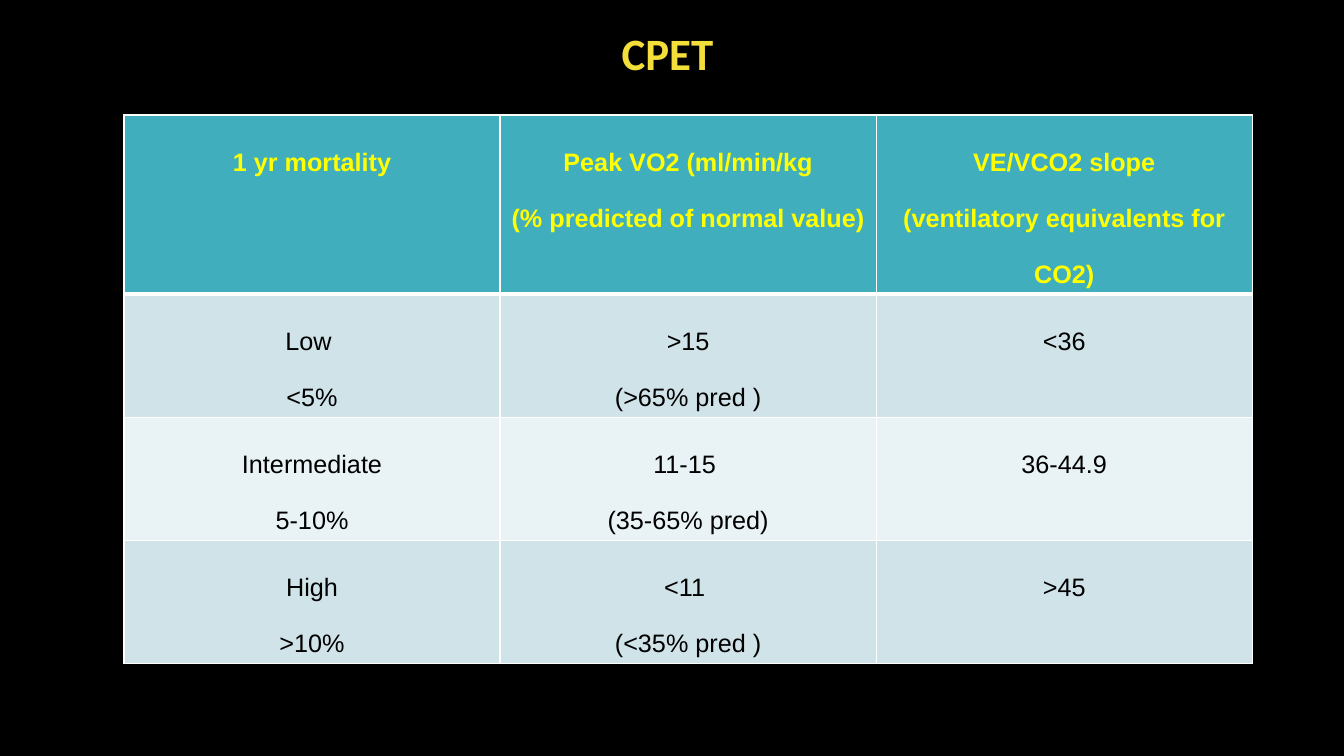
from lxml import etree
from pptx import Presentation
from pptx.dml.color import RGBColor
from pptx.enum.text import MSO_ANCHOR, PP_ALIGN
from pptx.oxml.ns import qn
from pptx.util import Inches, Pt

CENTER = PP_ALIGN.CENTER
MIDDLE = MSO_ANCHOR.MIDDLE
TOP = MSO_ANCHOR.TOP

BLACK = RGBColor(0x00, 0x00, 0x00)
WHITE = RGBColor(0xFF, 0xFF, 0xFF)
GOLD = RGBColor(0xF4, 0xDE, 0x3A)
YELLOW = RGBColor(0xFF, 0xFF, 0x00)
TEAL = RGBColor(0x41, 0xAE, 0xBD)
BAND_DARK = RGBColor(0xCF, 0xE3, 0xE8)
BAND_LIGHT = RGBColor(0xE9, 0xF2, 0xF4)

RISK_ROWS = [
    ["1 yr mortality",
     "Peak VO2 (ml/min/kg\n(% predicted of normal value)",
     "VE/VCO2 slope\n(ventilatory equivalents for CO2)"],
    ["Low \n<5%", ">15\n(>65% pred )", "<36"],
    ["Intermediate\n5-10%", "11-15 \n(35-65% pred)", "36-44.9"],
    ["High\n>10%", "<11 \n(<35% pred )", ">45"],
]


class SlideBuilder:
    title_font = "Calibri"
    body_font = "Arial"

    def __init__(self, deck):
        self.page = deck.slides.add_slide(deck.slide_layouts[5])
        background = self.page.background.fill
        background.solid()
        background.fore_color.rgb = BLACK

    def set_text(self, frame, text, font, size, color, bold, spacing):
        frame.text = text
        for para in frame.paragraphs:
            para.alignment = CENTER
            para.line_spacing = spacing
            for span in para.runs:
                span.font.name = font
                span.font.size = Pt(size)
                span.font.bold = bold
                span.font.color.rgb = color

    def title(self, text, left, top, width, height):
        box = self.page.shapes.title
        box.left, box.top = Inches(left), Inches(top)
        box.width, box.height = Inches(width), Inches(height)
        box.text_frame.vertical_anchor = MIDDLE
        self.set_text(box.text_frame, text, self.title_font, 32, GOLD, True, 0.9)

    def border(self, cell, side, width):
        properties = cell._tc.get_or_add_tcPr()
        line = etree.SubElement(properties, qn("a:" + side), w=str(Pt(width)))
        fill = etree.SubElement(line, qn("a:solidFill"))
        etree.SubElement(fill, qn("a:srgbClr"), val=str(WHITE))

    def table(self, rows, left, top, width, heights):
        grid = self.page.shapes.add_table(
            len(rows), len(rows[0]), Inches(left), Inches(top),
            Inches(width), Inches(sum(heights))).table
        for row_index, texts in enumerate(rows):
            grid.rows[row_index].height = Inches(heights[row_index])
            for column_index, text in enumerate(texts):
                self.cell(grid.cell(row_index, column_index), text, row_index)

    def cell(self, cell, text, row_index):
        header = row_index == 0
        cell.vertical_anchor = TOP
        self.set_text(cell.text_frame, text, self.body_font, 18,
                      YELLOW if header else BLACK, header, 2.0)
        # A thicker rule separates the header from the body
        self.border(cell, "lnL", 1)
        self.border(cell, "lnR", 1)
        self.border(cell, "lnT", 3 if row_index == 1 else 1)
        self.border(cell, "lnB", 3 if header else 1)
        cell.fill.solid()
        band = BAND_DARK if row_index % 2 else BAND_LIGHT
        cell.fill.fore_color.rgb = TEAL if header else band


def main():
    deck = Presentation()
    deck.slide_width, deck.slide_height = Inches(13.33), Inches(7.5)
    builder = SlideBuilder(deck)

    # Heading
    builder.title("CPET ", 0.92, 0.18, 11.5, 0.75)

    # Mortality risk by exercise test result
    builder.table(RISK_ROWS, 1.23, 1.14, 11.19, [1.78, 1.22, 1.22, 1.22])

    deck.save("out.pptx")


if __name__ == "__main__":
    main()
